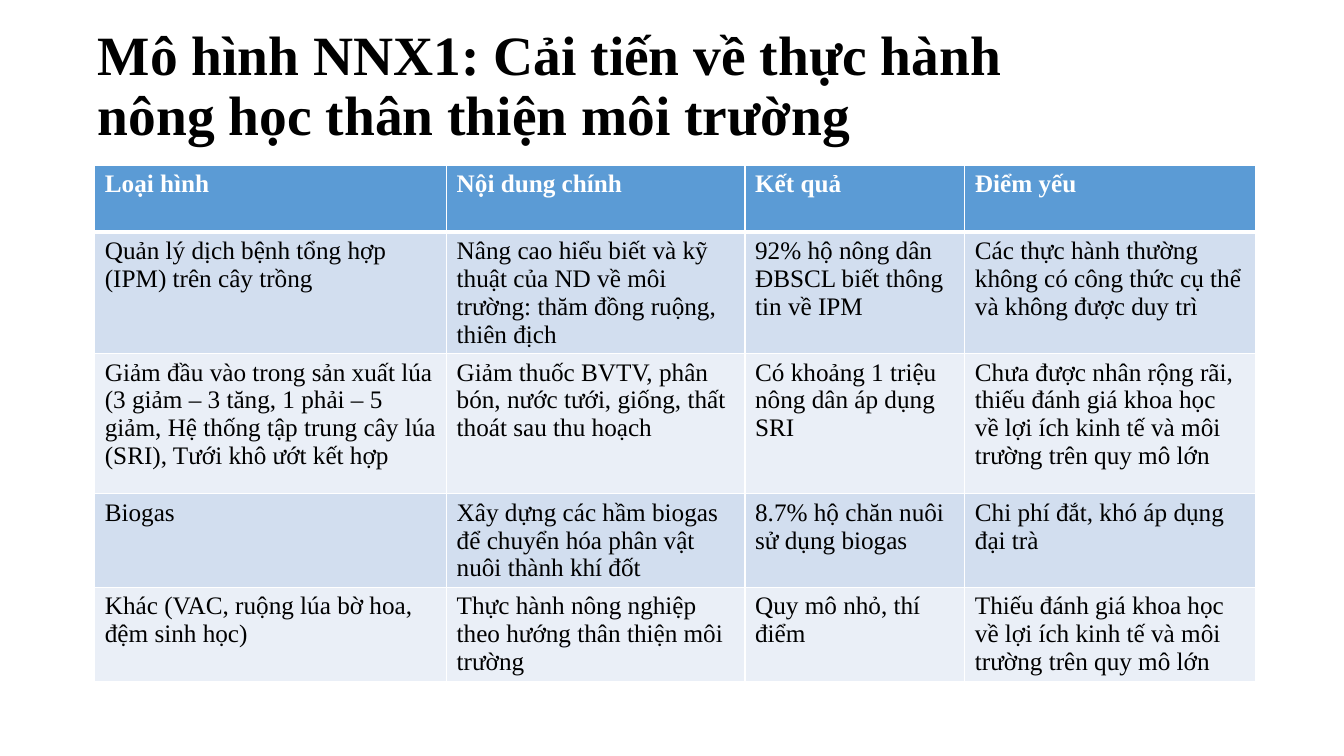
from dataclasses import dataclass

from lxml import etree
from pptx import Presentation
from pptx.dml.color import RGBColor
from pptx.enum.text import MSO_ANCHOR, MSO_AUTO_SIZE, PP_ALIGN
from pptx.oxml.ns import qn
from pptx.util import Inches, Pt

LEFT = PP_ALIGN.LEFT
TOP = MSO_ANCHOR.TOP
MIDDLE = MSO_ANCHOR.MIDDLE
NO_FIT = MSO_AUTO_SIZE.NONE


@dataclass(frozen=True)
class Theme:
    font: str = "Times New Roman"
    title_size: float = 39.6
    body_size: float = 18
    text: str = "000000"
    white: str = "FFFFFF"
    header: str = "5B9BD5"
    bands: tuple = ("D2DEEF", "EAEFF7")
    border: float = 1
    header_border: float = 3


VOWELS = "aăâeêioôơuưy"
TONES = {
    0x300: "àằầèềìòồờùừỳ",
    0x301: "áắấéếíóốớúứý",
    0x303: "ãẵẫẽễĩõỗỡũữỹ",
    0x309: "ảẳẩẻểỉỏổởủửỷ",
    0x323: "ạặậẹệịọộợụựỵ",
}
TONE_MARKS = {
    ord(letter): vowel + chr(mark)
    for mark, letters in TONES.items()
    for letter, vowel in zip(letters, VOWELS)
}

TITLE = "Mô hình NNX1: Cải tiến về thực hành \vnông học thân thiện môi trường"
COLUMN_WIDTHS = (3.49, 2.96, 2.18, 2.88)
ROW_HEIGHTS = (0.66, 1.2, 1.39, 0.93, 0.93)
ROWS = (
    ("Loại hình", "Nội dung chính", "Kết quả", "Điểm yếu"),
    (
        "Quản lý dịch bệnh tổng hợp (IPM) trên cây trồng",
        "Nâng cao hiểu biết và kỹ thuật của ND về môi trường: thăm đồng ruộng, thiên địch",
        "92% hộ nông dân ĐBSCL biết thông tin về IPM",
        "Các thực hành thường không có công thức cụ thể và không được duy trì",
    ),
    (
        "Giảm đầu vào trong sản xuất lúa (3 giảm – 3 tăng, 1 phải – 5 giảm, "
        "Hệ thống tập trung cây lúa (SRI), Tưới khô ướt kết hợp",
        "Giảm thuốc BVTV, phân bón, nước tưới, giống, thất thoát sau thu hoạch",
        "Có khoảng 1 triệu nông dân áp dụng SRI",
        "Chưa được nhân rộng rãi, thiếu đánh giá khoa học về lợi ích kinh tế "
        "và môi trường trên quy mô lớn",
    ),
    (
        "Biogas",
        "Xây dựng các hầm biogas để chuyển hóa phân vật nuôi thành khí đốt",
        "8.7% hộ chăn nuôi sử dụng biogas",
        "Chi phí đắt, khó áp dụng đại trà",
    ),
    (
        "Khác (VAC, ruộng lúa bờ hoa, đệm sinh học)",
        "Thực hành nông nghiệp theo hướng thân thiện môi trường",
        "Quy mô nhỏ, thí điểm",
        "Thiếu đánh giá khoa học về lợi ích kinh tế và môi trường trên quy mô lớn",
    ),
)


def write_text(tf, text, *, font, size, color, bold=False, spacing=None):
    tf.word_wrap = True
    p = tf.paragraphs[0]
    p.text = text.translate(TONE_MARKS)
    p.alignment = LEFT
    if spacing:
        p.line_spacing = spacing
    for r in p.runs:
        r.font.name = font
        r.font.size = Pt(size)
        r.font.bold = bold
        r.font.color.rgb = RGBColor.from_string(color)


def set_border(cell, side, color, width):
    ln = etree.SubElement(cell._tc.get_or_add_tcPr(), qn(f"a:ln{side}"), w=str(Pt(width)))
    fill = etree.SubElement(ln, qn("a:solidFill"))
    etree.SubElement(fill, qn("a:srgbClr"), val=color)


class SlideBuilder:
    def __init__(self, prs, theme):
        self.theme = theme
        self.s = prs.slides.add_slide(prs.slide_layouts.get_by_name("Title Only"))

    def title(self, text, left, top, width, height):
        sp = self.s.shapes.title
        sp.left, sp.top = Inches(left), Inches(top)
        sp.width, sp.height = Inches(width), Inches(height)
        tf = sp.text_frame
        tf.auto_size = NO_FIT
        tf.vertical_anchor = MIDDLE
        write_text(tf, text, font=self.theme.font, size=self.theme.title_size,
                   color=self.theme.text, bold=True, spacing=0.9)

    def table(self, rows, widths, heights, left, top):
        frame = self.s.shapes.add_table(
            len(rows), len(widths), Inches(left), Inches(top),
            Inches(sum(widths)), Inches(sum(heights)))
        table = frame.table
        for column, width in zip(table.columns, widths):
            column.width = Inches(width)
        for row, height in zip(table.rows, heights):
            row.height = Inches(height)
        for i, texts in enumerate(rows):
            for j, text in enumerate(texts):
                self.cell(table.cell(i, j), text, i)

    def cell(self, cell, text, row):
        theme = self.theme
        is_header = row == 0
        thick_sides = {0: "B", 1: "T"}.get(row, "")
        for side in "LRTB":
            width = theme.header_border if side in thick_sides else theme.border
            set_border(cell, side, theme.white, width)
        color = theme.header if is_header else theme.bands[(row - 1) % 2]
        cell.fill.solid()
        cell.fill.fore_color.rgb = RGBColor.from_string(color)
        cell.vertical_anchor = TOP
        write_text(cell.text_frame, text, font=theme.font, size=theme.body_size,
                   color=theme.white if is_header else theme.text, bold=is_header)


def main():
    prs = Presentation()
    prs.slide_width, prs.slide_height = Inches(13.33), Inches(7.5)
    slide = SlideBuilder(prs, Theme())
    slide.title(TITLE, 0.87, 0.27, 11.5, 1.19)
    slide.table(ROWS, COLUMN_WIDTHS, ROW_HEIGHTS, 0.94, 1.64)
    prs.save("out.pptx")


if __name__ == "__main__":
    main()
